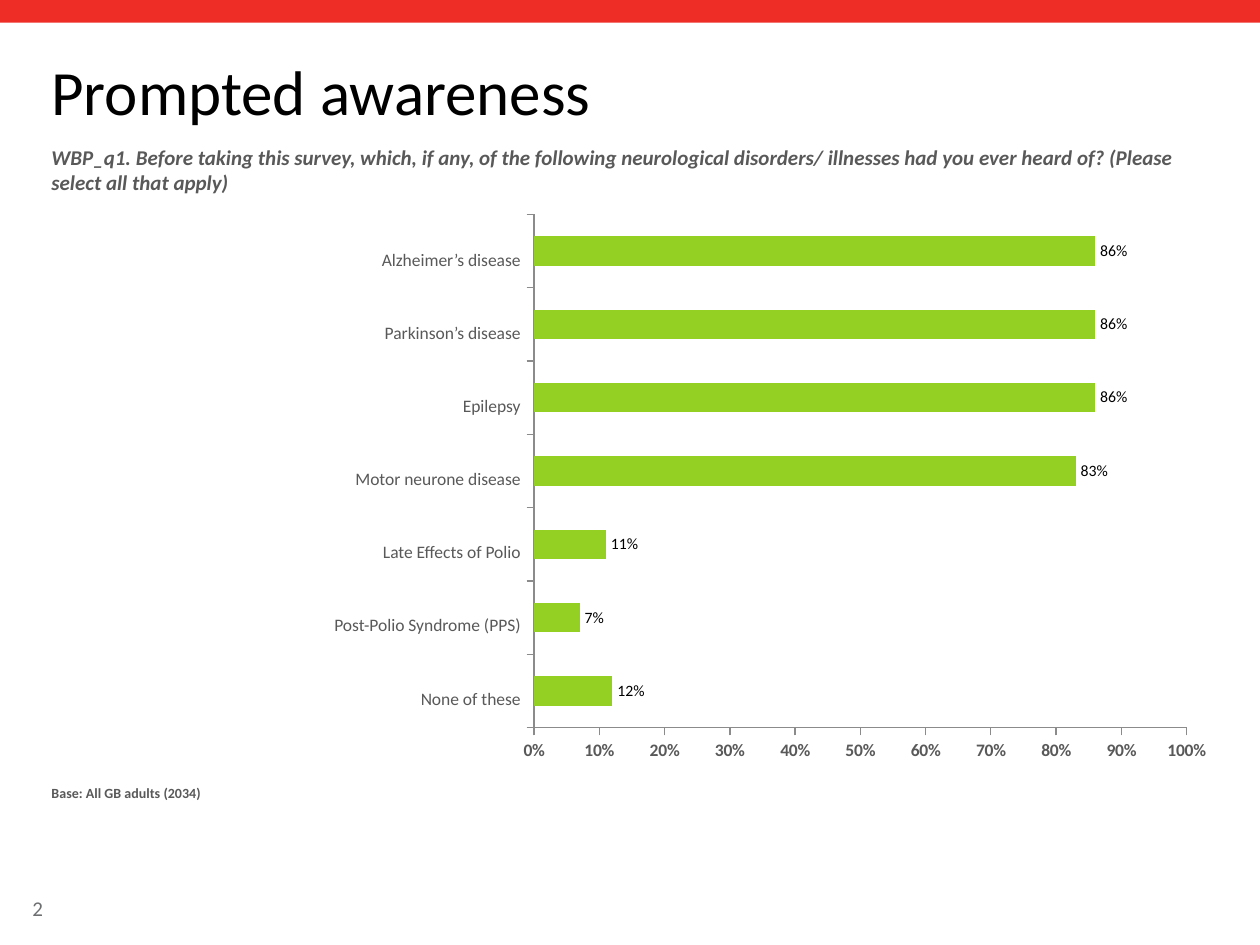
"""Build the prompted awareness slide with its bar chart."""
import pptx
import pptx.chart.data
import pptx.dml.color
import pptx.enum.chart
import pptx.enum.shapes
import pptx.enum.text
import pptx.oxml
import pptx.oxml.ns
import pptx.util

Pt = pptx.util.Pt
RGB = pptx.dml.color.RGBColor
ALIGN = pptx.enum.text.PP_ALIGN
ANCHOR = pptx.enum.text.MSO_ANCHOR
TICK = pptx.enum.chart.XL_TICK_MARK
LABEL = pptx.enum.chart.XL_TICK_LABEL_POSITION

RED = RGB(0xEE, 0x2D, 0x27)
GREEN = RGB(0x93, 0xD0, 0x23)
BLACK = RGB(0, 0, 0)
DARK = RGB(0x59, 0x59, 0x59)
GREY = RGB(0x6D, 0x6F, 0x71)
LINE = RGB(0x8B, 0x8B, 0x8B)

LEFT, WIDTH = 22.32, 676.08
ROW_TOP, ROW_STEP = 127.44, 41.76
ANSWERS = [
    ("Alzheimer’s disease", 0.86),
    ("Parkinson’s disease", 0.86),
    ("Epilepsy", 0.86),
    ("Motor neurone disease", 0.83),
    ("Late Effects of Polio", 0.11),
    ("Post-Polio Syndrome (PPS)", 0.07),
    ("None of these", 0.12),
]


def style(font, size, color, bold=False, italic=False, name="Calibri"):
    font.name, font.size = name, Pt(size)
    font.bold, font.italic = bold, italic
    font.color.rgb = color


def add_text(slide, box, text, size, color, anchor=ANCHOR.MIDDLE,
             align=ALIGN.LEFT, bold=False, italic=False):
    frame = slide.shapes.add_textbox(*map(Pt, box)).text_frame
    frame.word_wrap = True
    frame.vertical_anchor = anchor
    para = frame.paragraphs[0]
    para.text = text
    para.alignment = align
    style(para.font, size, color, bold, italic)


def add_band(slide):
    band = slide.shapes.add_shape(
        pptx.enum.shapes.MSO_SHAPE.RECTANGLE, 0, 0, Pt(720), Pt(13))
    band.shadow.inherit = False
    band.fill.solid()
    band.fill.fore_color.rgb = RED
    band.line.fill.background()


def set_axis(axis, label):
    axis.has_major_gridlines = False
    axis.major_tick_mark = TICK.OUTSIDE
    axis.minor_tick_mark = TICK.NONE
    axis.tick_label_position = label
    axis.format.line.color.rgb = LINE
    axis.format.line.width = Pt(0.75)


def place_plot(chart, x, y, w, h):
    area = chart.element.find(".//" + pptx.oxml.ns.qn("c:plotArea"))
    old = area.find(pptx.oxml.ns.qn("c:layout"))
    if old is not None:
        area.remove(old)
    area.insert(0, pptx.oxml.parse_xml(
        f'<c:layout {pptx.oxml.ns.nsdecls("c")}><c:manualLayout>'
        '<c:layoutTarget val="inner"/>'
        '<c:xMode val="edge"/><c:yMode val="edge"/>'
        f'<c:x val="{x}"/><c:y val="{y}"/><c:w val="{w}"/><c:h val="{h}"/>'
        '</c:manualLayout></c:layout>'))


def add_bars(slide, box):
    data = pptx.chart.data.CategoryChartData(number_format="0%")
    data.categories = [str(n + 1) for n in range(len(ANSWERS))]
    data.add_series("Series 1", [share for _, share in reversed(ANSWERS)])
    chart = slide.shapes.add_chart(
        pptx.enum.chart.XL_CHART_TYPE.BAR_CLUSTERED, *map(Pt, box), data).chart
    chart.has_legend = chart.has_title = False
    style(chart.font, 18, GREY, name="Manrope")
    place_plot(chart, 0.03, 0.02, 0.92, 0.9)

    set_axis(chart.category_axis, LABEL.NONE)
    style(chart.category_axis.tick_labels.font, 10, DARK)
    scale = chart.value_axis
    set_axis(scale, LABEL.LOW)
    scale.minimum_scale, scale.maximum_scale, scale.major_unit = 0, 1, 0.1
    scale.tick_labels.number_format = "0%"
    scale.tick_labels.number_format_is_linked = False
    style(scale.tick_labels.font, 10, DARK, bold=True)

    plot = chart.plots[0]
    plot.gap_width, plot.overlap = 150, -10
    plot.vary_by_categories = False
    fill = plot.series[0].format.fill
    fill.solid()
    fill.fore_color.rgb = GREEN
    plot.has_data_labels = True
    labels = plot.data_labels
    labels.show_value = True
    labels.position = pptx.enum.chart.XL_LABEL_POSITION.OUTSIDE_END
    labels.number_format = "0%"
    labels.number_format_is_linked = False
    style(labels.font, 9, BLACK)


def main():
    deck = pptx.Presentation()
    deck.slide_width, deck.slide_height = Pt(720), Pt(540)
    slide = deck.slides.add_slide(deck.slide_layouts[6])
    add_band(slide)
    add_text(slide, (11.52, 508.32, 55.44, 21.6), "2", 12, GREY)
    add_text(slide, (LEFT, 24.48, WIDTH, 54.72), "Prompted awareness", 36, BLACK)
    add_text(slide, (LEFT, 79.2, WIDTH, 36.72),
             "WBP_q1. Before taking this survey, which, if any, of the following "
             "neurological disorders/ illnesses had you ever heard of? "
             "(Please select all that apply)",
             12, DARK, ANCHOR.TOP, bold=True, italic=True)
    add_bars(slide, (293.04, 115.92, 405.36, 326.16))
    for row, (name, _) in enumerate(ANSWERS):
        add_text(slide, (11.52, ROW_TOP + row * ROW_STEP, 293.04, ROW_STEP),
                 name, 10, DARK, align=ALIGN.RIGHT)
    add_text(slide, (LEFT, 444.96, WIDTH, 30.96), "Base: All GB adults (2034)",
             8, DARK, ANCHOR.TOP, bold=True)
    deck.save("out.pptx")


if __name__ == "__main__":
    main()
